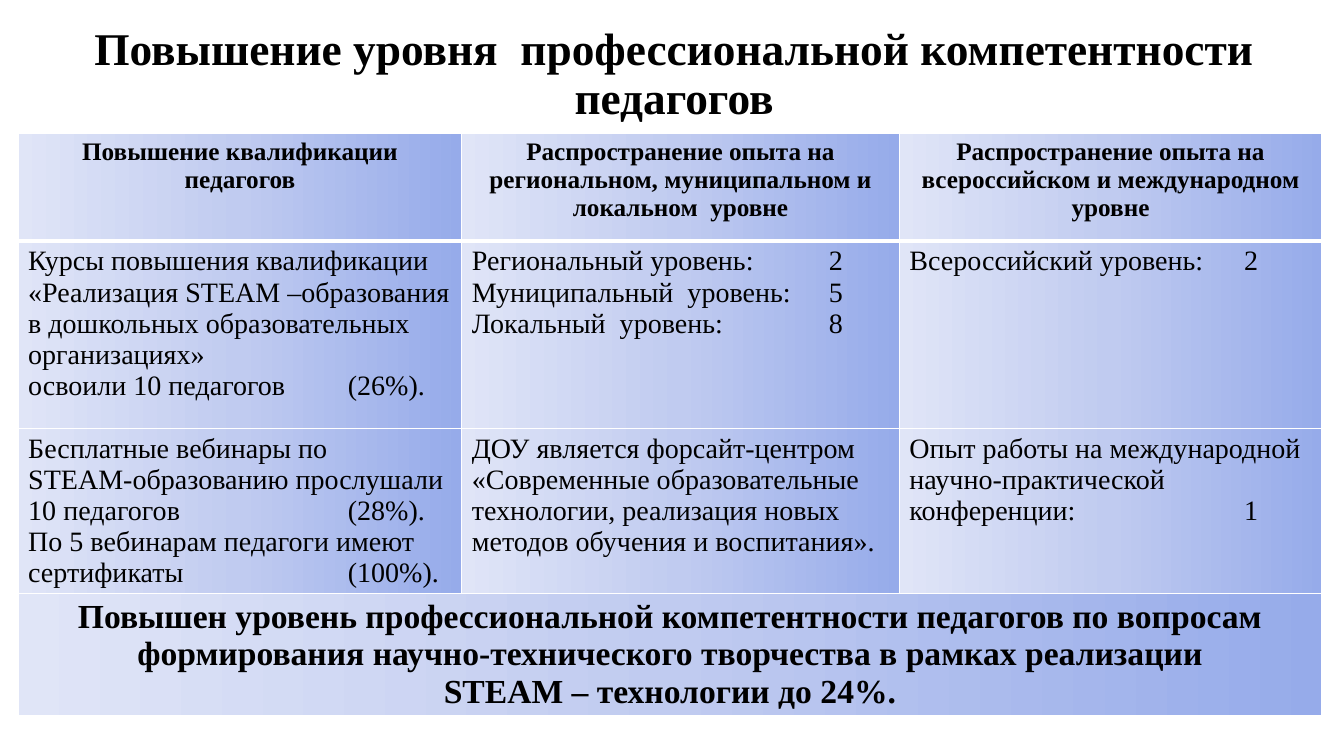
import dataclasses

import lxml.etree
import pptx
import pptx.dml.color
import pptx.enum.text
import pptx.oxml.ns
import pptx.util

Inches = pptx.util.Inches
ALIGN = pptx.enum.text.PP_ALIGN
qn = pptx.oxml.ns.qn

COLORS = {"text": "000000", "border": "FFFFFF"}
GRADIENT = {0: "96ABEA", 50: "C0CBF0", 100: "E0E5F7"}
FONT = "Times New Roman"
COLUMN_WIDTHS = [4.4, 4.34, 4.19]
ROW_HEIGHTS = [1.07, 1.86, 1.52, 0.82]
VALUE_TABS = [3.17, 3.54, 3.32]  # where the figures start in each column


@dataclasses.dataclass
class RowStyle:
    size: float
    bold: bool
    align: ALIGN
    top: float = 1
    bottom: float = 1


@dataclasses.dataclass
class Row:
    style: RowStyle
    cells: list[list[str]]


HEADER = RowStyle(18, True, ALIGN.CENTER, bottom=3)
FIRST_BODY = RowStyle(20, False, ALIGN.LEFT, top=3)
BODY = RowStyle(20, False, ALIGN.LEFT)
SUMMARY = RowStyle(24, True, ALIGN.CENTER)

ROWS = [
    Row(HEADER, [
        ["Повышение квалификации педагогов"],
        ["Распространение опыта на региональном, муниципальном и локальном  уровне"],
        ["Распространение опыта на всероссийском и международном уровне"],
    ]),
    Row(FIRST_BODY, [
        ["Курсы повышения квалификации «Реализация STEAM –образования "
         "в дошкольных образовательных организациях»",
         "освоили 10 педагогов\t(26%)."],
        ["Региональный уровень:\t2", "Муниципальный  уровень:\t5",
         "Локальный  уровень:\t8"],
        ["Всероссийский уровень:\t2"],
    ]),
    Row(BODY, [
        ["Бесплатные вебинары по",
         "STEAM-образованию прослушали 10 педагогов\t(28%).",
         "По 5 вебинарам педагоги имеют сертификаты\t(100%)."],
        ["ДОУ является форсайт-центром «Современные образовательные технологии, "
         "реализация новых методов обучения и воспитания»."],
        ["Опыт работы на международной научно-практической конференции:\t1"],
    ]),
    Row(SUMMARY, [
        ["Повышен уровень профессиональной компетентности педагогов по вопросам "
         "формирования научно-технического творчества в рамках реализации",
         "STEAM – технологии до 24%."],
        [], [],
    ]),
]


def format_font(font, size: float, bold: bool) -> None:
    values = {"name": FONT, "size": pptx.util.Pt(size), "bold": bold}
    for attribute, value in values.items():
        setattr(font, attribute, value)
    font.color.rgb = pptx.dml.color.RGBColor.from_string(COLORS["text"])


def add_color(parent, color: str) -> None:
    lxml.etree.SubElement(parent, qn("a:srgbClr"), val=color)


def paint_cell(cell, style: RowStyle) -> None:
    """Give a cell white borders and the blue gradient."""
    properties = cell._tc.get_or_add_tcPr()
    borders = {"L": 1, "R": 1, "T": style.top, "B": style.bottom}
    for side, width in borders.items():
        line = lxml.etree.SubElement(
            properties, qn(f"a:ln{side}"), w=str(pptx.util.Pt(width)))
        add_color(lxml.etree.SubElement(line, qn("a:solidFill")), COLORS["border"])
    gradient = lxml.etree.SubElement(properties, qn("a:gradFill"), rotWithShape="1")
    stops = lxml.etree.SubElement(gradient, qn("a:gsLst"))
    for percent, color in GRADIENT.items():
        add_color(lxml.etree.SubElement(stops, qn("a:gs"), pos=str(percent * 1000)), color)
    lxml.etree.SubElement(gradient, qn("a:lin"), ang=str(180 * 60000), scaled="0")


def write_cell(cell, lines: list[str], style: RowStyle, value_tab: float) -> None:
    frame = cell.text_frame
    for index, line in enumerate(lines):
        paragraph = frame.add_paragraph() if index else frame.paragraphs[0]
        paragraph.alignment = style.align
        if "\t" in line:
            tabs = lxml.etree.SubElement(
                paragraph._p.get_or_add_pPr(), qn("a:tabLst"))
            lxml.etree.SubElement(
                tabs, qn("a:tab"), pos=str(Inches(value_tab)), algn="l")
        run = paragraph.add_run()
        run.text = line
        format_font(run.font, style.size, style.bold)


def add_title(slide) -> None:
    title = slide.shapes.title
    place = {"left": 0.31, "top": 0.15, "width": 12.75, "height": 1.19}
    for attribute, value in place.items():
        setattr(title, attribute, Inches(value))
    frame = title.text_frame
    frame.text = "Повышение уровня  профессиональной компетентности педагогов"
    frame_format = {
        "word_wrap": True,
        "auto_size": pptx.enum.text.MSO_AUTO_SIZE.NONE,
        "vertical_anchor": pptx.enum.text.MSO_ANCHOR.MIDDLE,
    }
    for attribute, value in frame_format.items():
        setattr(frame, attribute, value)
    heading = frame.paragraphs[0]
    heading.alignment = ALIGN.CENTER
    heading.line_spacing = 0.9
    format_font(heading.runs[0].font, 32.4, True)


def add_results_table(slide) -> None:
    results = slide.shapes.add_table(
        len(ROWS), len(COLUMN_WIDTHS),
        Inches(0.18), Inches(1.32), Inches(12.93), Inches(6)).table
    for column, width in zip(results.columns, COLUMN_WIDTHS):
        column.width = Inches(width)
    for table_row, height, row in zip(results.rows, ROW_HEIGHTS, ROWS):
        table_row.height = Inches(height)
        for cell, lines, value_tab in zip(table_row.cells, row.cells, VALUE_TABS):
            paint_cell(cell, row.style)
            write_cell(cell, lines, row.style, value_tab)
    # The summary spans the whole width
    last = len(ROWS) - 1
    results.cell(last, 0).merge(results.cell(last, len(COLUMN_WIDTHS) - 1))


def main() -> None:
    presentation = pptx.Presentation()
    presentation.slide_width = Inches(13.33)
    presentation.slide_height = Inches(7.5)
    slide = presentation.slides.add_slide(
        presentation.slide_layouts.get_by_name("Title Only"))
    add_title(slide)
    add_results_table(slide)
    presentation.save("out.pptx")


if __name__ == "__main__":
    main()
